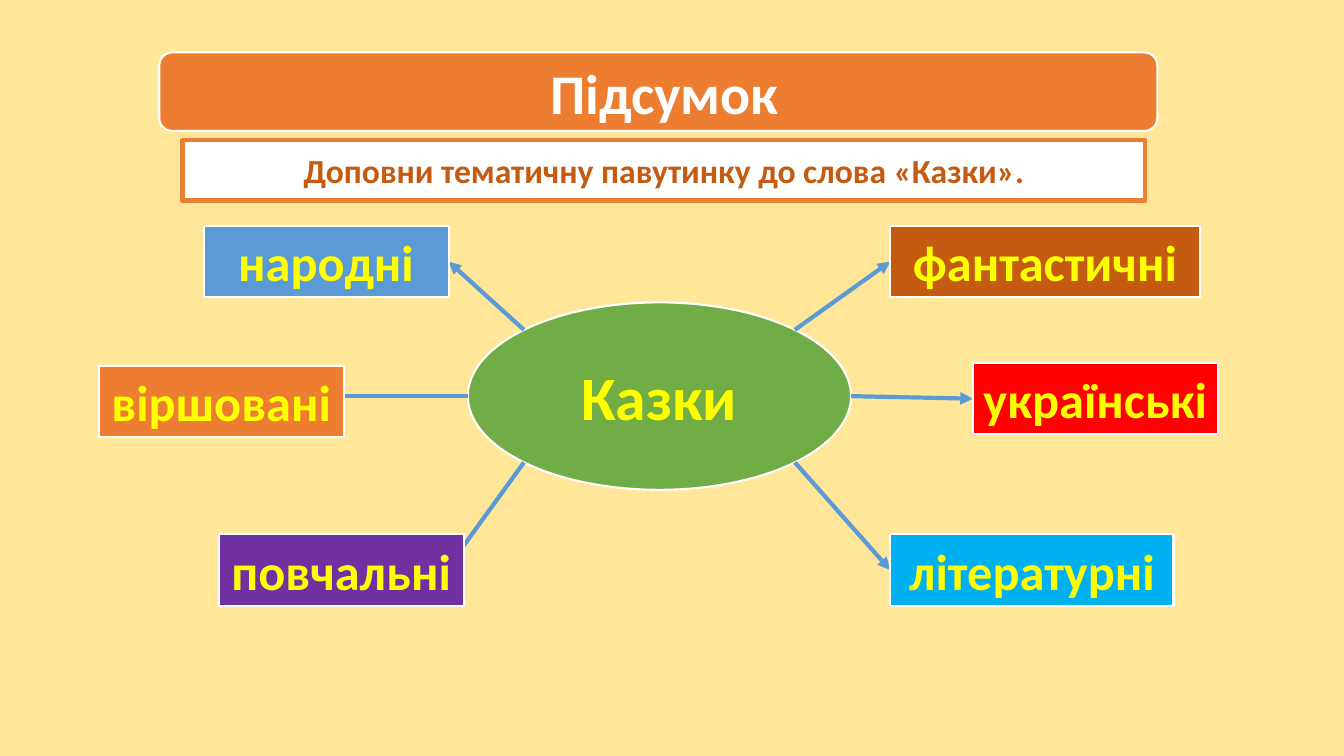
from math import sqrt

from lxml import etree
from pptx import Presentation
from pptx.dml.color import RGBColor
from pptx.enum.shapes import MSO_CONNECTOR as Connector, MSO_SHAPE as Preset
from pptx.enum.text import MSO_ANCHOR as Anchor, PP_ALIGN as Align
from pptx.oxml.ns import qn
from pptx.util import Inches, Pt

COLORS = {
    "sand": "FFE699", "white": "FFFFFF", "orange": "ED7D31", "brown": "C55A11",
    "green": "70AD47", "yellow": "FFFF00", "blue": "5B9BD5", "red": "FF0000",
    "purple": "7030A0", "sky": "00B0F0",
}
FONT = "Calibri"
SLIDE_SIZE = (13.33, 7.5)

# Boxes are left, top, width, height in percent of the slide.
TITLE = ("Підсумок", (11.85, 6.93, 74.27, 10.4))
TASK = ("Доповни тематичну павутинку до слова «Казки».", (13.58, 18.53, 71.64, 8))
TOPIC = ("Казки", (34.81, 40, 28.51, 24.8))
LABEL_HEIGHT = 9.47
LEFT_SIDE, RIGHT_SIDE = 1, 3

# Text, fill, left, top, width, direction from the topic, side joined, hidden arrow end.
BRANCHES = [
    ("народні", "blue", 15.15, 29.87, 18.23, (-1, -1), RIGHT_SIDE, None),
    ("українські", "red", 72.39, 48, 18.23, (1, 0), LEFT_SIDE, None),
    ("віршовані", "orange", 7.35, 48.4, 18.23, (-1, 0), None, (24.46, 52.4)),
    ("повчальні", "purple", 16.28, 70.67, 18.23, (-1, 1), None, (33.38, 74.93)),
    ("фантастичні", "brown", 66.24, 29.87, 23.03, (1, -1), LEFT_SIDE, None),
    ("літературні", "sky", 66.24, 70.67, 21.08, (1, 1), LEFT_SIDE, None),
]


def color(name):
    return RGBColor.from_string(COLORS[name])


def across(percent):
    return Inches(SLIDE_SIZE[0] * percent / 100)


def down(percent):
    return Inches(SLIDE_SIZE[1] * percent / 100)


def add_box(text, box, *, preset=Preset.RECTANGLE, fill, line="white",
            line_width=1.5, size=36, text_color="yellow", inset=0.1):
    left, top, width, height = box
    shape = slide.shapes.add_shape(
        preset, across(left), down(top), across(width), down(height))
    shape.shadow.inherit = False
    shape.fill.solid()
    shape.fill.fore_color.rgb = color(fill)
    shape.line.color.rgb = color(line)
    shape.line.width = Pt(line_width)
    frame = shape.text_frame
    frame.word_wrap = True
    frame.vertical_anchor = Anchor.MIDDLE
    frame.margin_left = Inches(inset)
    paragraph = frame.paragraphs[0]
    paragraph.alignment = Align.CENTER
    run = paragraph.add_run()
    run.text = text
    run.font.name = FONT
    run.font.size = Pt(size)
    run.font.bold = True
    run.font.color.rgb = color(text_color)
    return shape


def add_arrow(start, end):
    arrow = slide.shapes.add_connector(
        Connector.STRAIGHT, across(start[0]), down(start[1]), across(end[0]), down(end[1]))
    arrow.line.color.rgb = color("blue")
    arrow.line.width = Pt(3)
    etree.SubElement(arrow.line._get_or_add_ln(), qn("a:tailEnd"), type="triangle")
    etree.SubElement(arrow._element.spPr, qn("a:effectLst"))
    return arrow


def topic_edge(direction):
    left, top, width, height = TOPIC[1]
    horizontal, vertical = direction
    reach = 2 * sqrt(horizontal ** 2 + vertical ** 2)
    return (left + width / 2 + width * horizontal / reach,
            top + height / 2 + height * vertical / reach)


presentation = Presentation()
presentation.slide_width, presentation.slide_height = map(Inches, SLIDE_SIZE)
slide = presentation.slides.add_slide(presentation.slide_layouts[6])
slide.background.fill.solid()
slide.background.fill.fore_color.rgb = color("sand")

add_box(*TOPIC, preset=Preset.OVAL, fill="green", size=44)
add_box(*TASK, fill="white", line="orange", line_width=3, size=24, text_color="brown")

for text, fill, left, top, width, direction, side, hidden_end in BRANCHES:
    arrow = add_arrow(topic_edge(direction), hidden_end or (left, top))
    label = add_box(text, (left, top, width, LABEL_HEIGHT), fill=fill)
    if side is not None:
        arrow.end_connect(label, side)

add_box(*TITLE, preset=Preset.ROUNDED_RECTANGLE, fill="orange",
        size=40, text_color="white", inset=0.22)

presentation.save("out.pptx")
